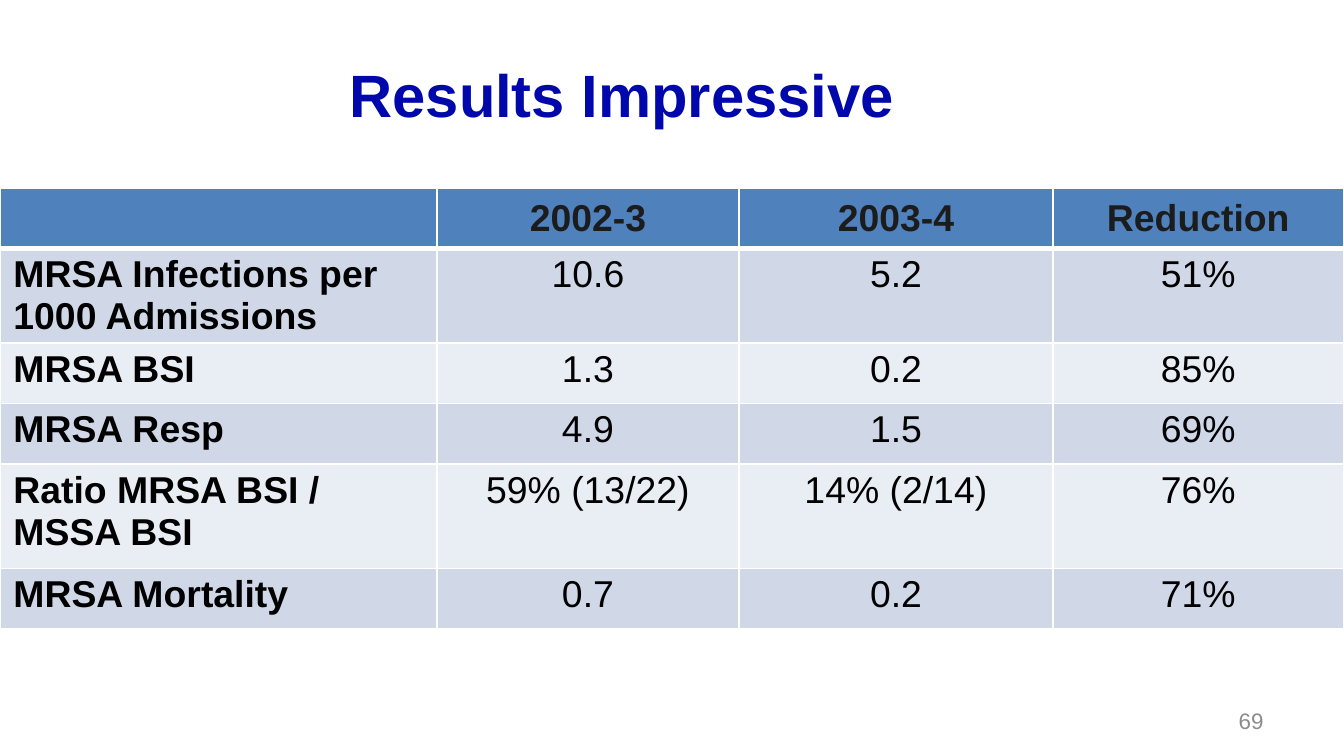
"""Build the slide that tabulates the reduction in MRSA infections."""
from dataclasses import dataclass

from lxml.etree import SubElement
from pptx import Presentation
from pptx.dml.color import RGBColor
from pptx.enum.text import MSO_ANCHOR, PP_ALIGN
from pptx.oxml.ns import qn
from pptx.util import Pt


@dataclass(frozen=True)
class Theme:
    font: str = "Arial"
    title: str = "0008AB"
    header_fill: str = "4F81BD"
    header_text: str = "1C1C1C"
    bands: tuple = ("D0D8E8", "E9EDF4")
    body_text: str = "000000"
    border: str = "FFFFFF"
    page_number: str = "8C8C8C"
    title_size: int = 32
    table_size: int = 20
    number_size: int = 12


theme = Theme()


def style(para, size, color, bold, alignment):
    para.alignment = alignment
    para.font.name = theme.font
    para.font.size = Pt(size)
    para.font.bold = bold
    para.font.color.rgb = RGBColor.from_string(color)


def add_border(cell, side, width):
    line = SubElement(cell._tc.get_or_add_tcPr(), qn(f"a:ln{side}"), w=str(Pt(width)))
    fill = SubElement(line, qn("a:solidFill"))
    SubElement(fill, qn("a:srgbClr"), val=theme.border)


deck = Presentation()
deck.slide_width, deck.slide_height = Pt(720), Pt(405)
page = deck.slides.add_slide(deck.slide_layouts[5])

title = page.shapes.title
title.left, title.top, title.width, title.height = Pt(180), Pt(16.5), Pt(504), Pt(67.5)
title.text_frame.text = "Results Impressive"
title.text_frame.vertical_anchor = MSO_ANCHOR.MIDDLE
style(title.text_frame.paragraphs[0], theme.title_size, theme.title, True, PP_ALIGN.LEFT)

rows = [
    ("", "2002-3", "2003-4", "Reduction"),
    ("MRSA Infections per 1000 Admissions", "10.6", "5.2", "51%"),
    ("MRSA BSI", "1.3", "0.2", "85%"),
    ("MRSA Resp", "4.9", "1.5", "69%"),
    ("Ratio MRSA BSI / MSSA BSI", "59% (13/22)", "14% (2/14)", "76%"),
    ("MRSA Mortality", "0.7", "0.2", "71%"),
]
column_widths = (234, 162, 168, 156)
row_heights = (32.4, 48.4, 32.4, 32.4, 56, 32.4)

table = page.shapes.add_table(
    len(rows), len(column_widths), Pt(0), Pt(100.8), Pt(sum(column_widths)), Pt(sum(row_heights))
).table
for column, width in zip(table.columns, column_widths):
    column.width = Pt(width)

for row_index, (values, height) in enumerate(zip(rows, row_heights)):
    table.rows[row_index].height = Pt(height)
    is_header = row_index == 0
    fill = theme.header_fill if is_header else theme.bands[(row_index - 1) % 2]
    color = theme.header_text if is_header else theme.body_text
    top_width = 3 if row_index == 1 else 1
    bottom_width = 3 if is_header else 1
    for column_index, value in enumerate(values):
        cell = table.cell(row_index, column_index)
        is_label = column_index == 0
        cell.text = value
        cell.margin_left = cell.margin_right = Pt(7.2)
        cell.margin_top = cell.margin_bottom = Pt(3)
        cell.vertical_anchor = MSO_ANCHOR.MIDDLE if is_header else MSO_ANCHOR.TOP
        for side, width in zip("LRTB", (1, 1, top_width, bottom_width)):
            add_border(cell, side, width)
        cell.fill.solid()
        cell.fill.fore_color.rgb = RGBColor.from_string(fill)
        alignment = PP_ALIGN.LEFT if is_label else PP_ALIGN.CENTER
        style(cell.text_frame.paragraphs[0], theme.table_size, color, is_header or is_label, alignment)

number_box = page.shapes.add_textbox(Pt(516), Pt(375.4), Pt(168), Pt(21.6))
number_box.text_frame.word_wrap = True
number_box.text_frame.vertical_anchor = MSO_ANCHOR.MIDDLE
number_box.text_frame.text = "69"
style(number_box.text_frame.paragraphs[0], theme.number_size, theme.page_number, False, PP_ALIGN.RIGHT)

deck.save("out.pptx")
